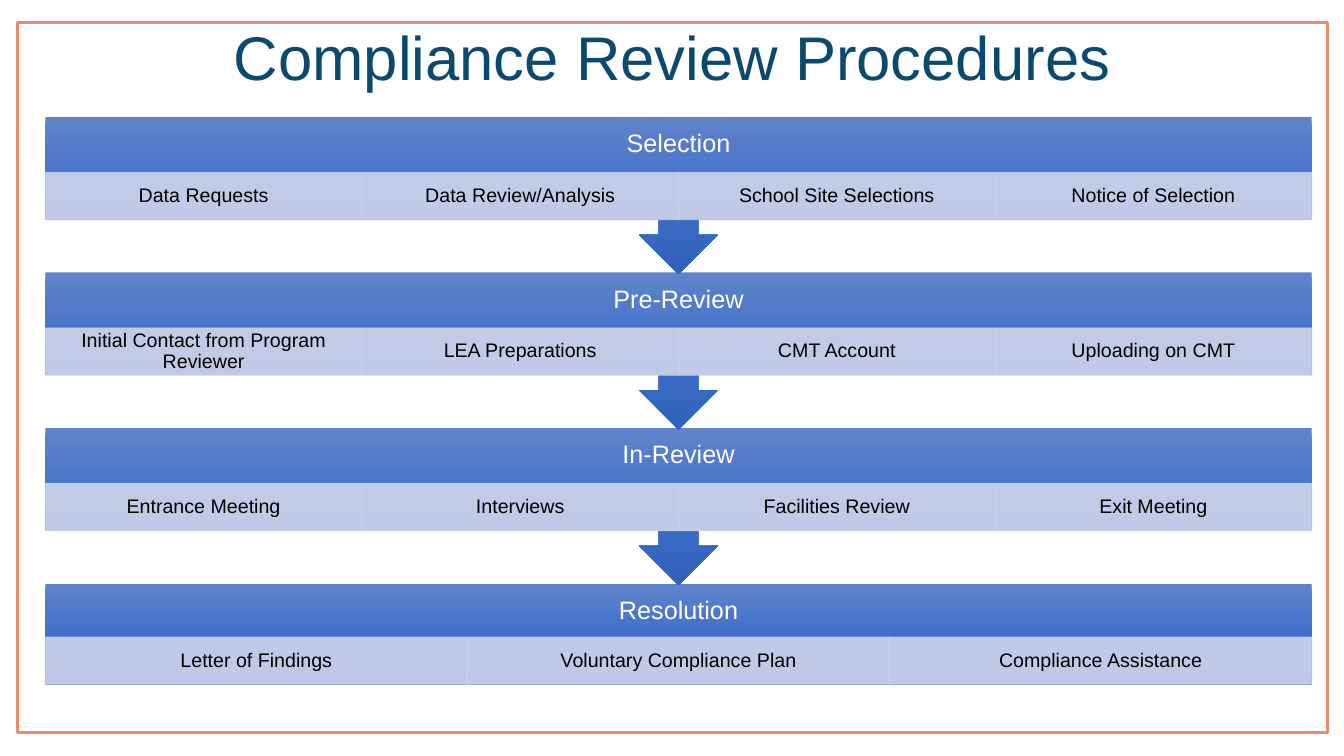
"""Build the compliance review procedures slide."""
import copy
import dataclasses

import pptx
import pptx.dml.color
import pptx.enum.shapes
import pptx.enum.text
import pptx.oxml
import pptx.oxml.ns
import pptx.util

TITLE = "Compliance Review Procedures"
STAGES = [
    ("Selection", ["Data Requests", "Data Review/Analysis",
                   "School Site Selections", "Notice of Selection"]),
    ("Pre-Review", ["Initial Contact from Program Reviewer", "LEA Preparations",
                    "CMT Account", "Uploading on CMT"]),
    ("In-Review", ["Entrance Meeting", "Interviews",
                   "Facilities Review", "Exit Meeting"]),
    ("Resolution", ["Letter of Findings", "Voluntary Compliance Plan",
                    "Compliance Assistance"]),
]


@dataclasses.dataclass(frozen=True)
class Theme:
    font: str = "Arial"
    title: str = "0C4A6D"
    frame: str = "ED8B6F"
    band: tuple = ((0, "6183CB"), (0.5, "3E70CA"), (1, "3062BB"))
    cell: str = "CFD5EA"
    light: str = "FFFFFF"
    dark: str = "000000"
    big: int = 44
    mid: int = 18
    small: int = 14


LOOK = Theme()
KIND = pptx.enum.shapes.MSO_SHAPE
LEFT, WIDTH = 0.45, 12.56
TOP, LAST = 1.16, 5.79
HEAD, CELL = 0.55, 0.47
BAND, CALL = 1.01, 1.56


def paint(code):
    return pptx.dml.color.RGBColor.from_string(code)


def write(shape, text, size, color, side=0.1, edge=0.05):
    frame = shape.text_frame
    frame.word_wrap = True
    frame.auto_size = pptx.enum.text.MSO_AUTO_SIZE.NONE
    frame.vertical_anchor = pptx.enum.text.MSO_ANCHOR.MIDDLE
    frame.margin_left = frame.margin_right = pptx.util.Inches(side)
    frame.margin_top = frame.margin_bottom = pptx.util.Inches(edge)
    para = frame.paragraphs[0]
    para.alignment = pptx.enum.text.PP_ALIGN.CENTER
    para.line_spacing = 0.9
    run = para.add_run()
    run.text = text
    run.font.name = LOOK.font
    run.font.size = pptx.util.Pt(size)
    run.font.color.rgb = paint(color)


def draw(slide, kind, *box):
    shape = slide.shapes.add_shape(kind, *map(pptx.util.Inches, box))
    shape.shadow.inherit = False
    return shape


def blend(shape):
    shape.line.fill.background()
    shape.fill.gradient()
    shape.fill.gradient_angle = 270
    stops = shape._element.spPr.find(".//" + pptx.oxml.ns.qn("a:gsLst"))
    stops.append(copy.deepcopy(stops[-1]))
    for stop, (place, code) in zip(shape.fill.gradient_stops, LOOK.band):
        stop.position = place
        stop.color.rgb = paint(code)


def add_cell(slide, text, *box):
    cell = draw(slide, KIND.RECTANGLE, *box)
    cell.fill.solid()
    cell.fill.fore_color.rgb = paint(LOOK.cell)
    cell.line.color.rgb = paint(LOOK.cell)
    cell.line.width = pptx.util.Pt(0.5)
    for color in cell._element.spPr.iter(pptx.oxml.ns.qn("a:srgbClr")):
        alpha = pptx.oxml.parse_xml(
            f'<a:alpha {pptx.oxml.ns.nsdecls("a")} val="90000"/>')
        color.append(alpha)
    write(cell, text, LOOK.small, LOOK.dark, side=0.11, edge=0.02)


def add_stage(slide, name, steps, top, last):
    kind = KIND.RECTANGLE if last else KIND.DOWN_ARROW_CALLOUT
    blend(draw(slide, kind, LEFT, top, WIDTH, BAND if last else CALL))
    box = map(pptx.util.Inches, (LEFT, top, WIDTH, HEAD))
    write(slide.shapes.add_textbox(*box), name, LOOK.mid, LOOK.light,
          side=0.14, edge=0.14)
    wide = WIDTH / len(steps)
    drop = HEAD - 0.02 if last else HEAD
    for col, step in enumerate(steps):
        add_cell(slide, step, LEFT + col * wide, top + drop, wide, CELL)


def main():
    deck = pptx.Presentation()
    deck.slide_width = pptx.util.Inches(13.33)
    deck.slide_height = pptx.util.Inches(7.5)
    slide = deck.slides.add_slide(deck.slide_layouts[5])

    title = slide.shapes.title
    title.left, title.top, title.width, title.height = map(
        pptx.util.Inches, (0.17, 0.22, 13, 0.77))
    write(title, TITLE, LOOK.big, LOOK.title)

    frame = draw(slide, KIND.RECTANGLE, 0.17, 0.22, 13, 7.05)
    frame.fill.background()
    frame.line.color.rgb = paint(LOOK.frame)
    frame.line.width = pptx.util.Pt(2)

    end = len(STAGES) - 1
    pitch = (LAST - TOP) / end
    for row, (name, steps) in reversed(list(enumerate(STAGES))):
        add_stage(slide, name, steps, TOP + row * pitch, row == end)
    deck.save("out.pptx")


if __name__ == "__main__":
    main()
